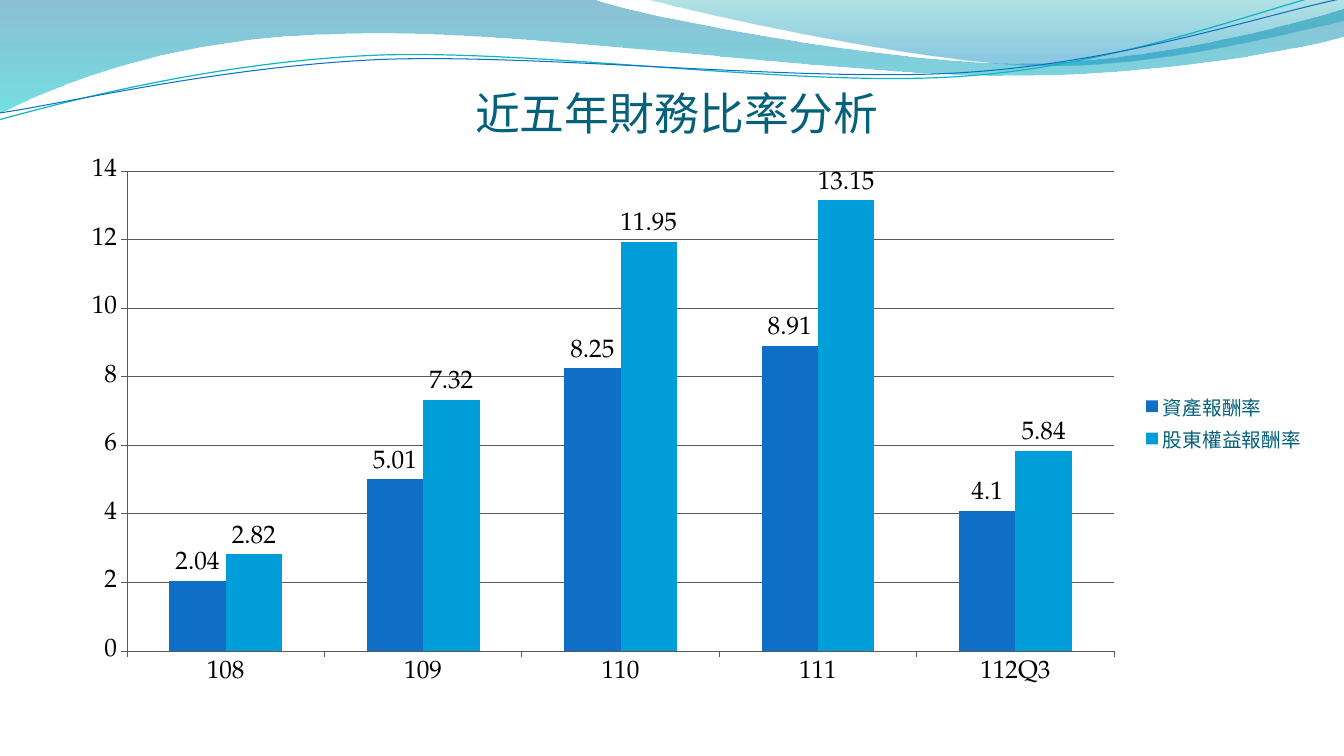
"""Build the slide of five-year financial ratios with its wave banner."""
import math

import pptx
import pptx.chart.data
import pptx.dml.color
import pptx.enum.chart
import pptx.enum.text
import pptx.oxml
import pptx.oxml.ns
import pptx.util
from pptx.util import Inches, Pt

RGBColor = pptx.dml.color.RGBColor
BLUE = RGBColor(0x0F, 0x6F, 0xC6)
SKY = RGBColor(0x00, 0x9D, 0xD9)
TEAL = RGBColor(0x0A, 0xB8, 0xBF)
DEEP_TEAL = RGBColor(0x04, 0x61, 0x7B)
WAVE_BLUE = RGBColor(0x00, 0x74, 0xA1)
WAVE_CYAN = RGBColor(0x00, 0xC6, 0xCF)
CREST_GREEN = RGBColor(0x00, 0xA1, 0xA9)
CREST_BLUE = RGBColor(0x00, 0x8B, 0xBF)
BLACK = RGBColor(0, 0, 0)
GREY = RGBColor(0x59, 0x59, 0x59)
CJK_FONT = "Noto Sans CJK SC"
NUMBER_FONT = "TeX Gyre Pagella"

TITLE = "近五年財務比率分析"
YEARS = ["108", "109", "110", "111", "112Q3"]
RATIOS = [
    ("資產報酬率", (2.04, 5.01, 8.25, 8.91, 4.1), BLUE),
    ("股東權益報酬率", (2.82, 7.32, 11.95, 13.15, 5.84), SKY),
]
CHART_BOX = (0.67, 1.47, 12.39, 5.44)
PLOT_BOX = (1.26, 1.7, 9.79, 4.76)

WAVES = [
    ([(0, 0), (5.87, -0.01), (6.34, 0.17, 8.85, 0.63, 10.11, 0.63),
      (11.38, 0.63, 12.78, 0.26, 13.33, 0.09), (13.35, 0.36),
      (13.11, 0.44, 11.6, 0.76, 9.94, 0.75), (8.29, 0.75, 5.09, 0.28, 3.43, 0.34),
      (1.72, 0.36, 0.61, 0.83, -0.01, 1.13), (0, 0)],
     [(0, WAVE_BLUE, 45), (100, WAVE_CYAN, 55)]),
    ([(6.39, -0.01), (6.79, 0.11, 9.09, 0.62, 10.25, 0.65),
      (11.41, 0.69, 12.82, 0.32, 13.33, 0.21), (13.33, 0), (6.39, -0.01)],
     [(0, CREST_GREEN, 30), (80, CREST_BLUE, 45)]),
]
RIPPLES = [
    ([(-0.01, 1.19), (0.64, 1.01, 2.11, 0.62, 3.69, 0.55),
      (5.27, 0.48, 7.9, 0.87, 9.5, 0.76), (11.1, 0.66, 12.52, 0.08, 13.31, -0.1)],
     TEAL, 0.85),
    ([(0, 1.12), (0.63, 1.03, 2.18, 0.66, 3.78, 0.59),
      (5.37, 0.53, 7.96, 0.82, 9.55, 0.72), (11.15, 0.62, 12.55, 0.14, 13.34, -0.02)],
     BLUE, 0.75),
]
RIPPLE_CENTRE = (6.66, 0.58)
RIPPLE_TILT = -2.7


def level(x, y, tilt):
    """Turn a point back by the tilt around the ripple centre."""
    cx, cy = RIPPLE_CENTRE
    angle = math.radians(-tilt)
    dx, dy = x - cx, y - cy
    return (cx + dx * math.cos(angle) - dy * math.sin(angle),
            cy + dx * math.sin(angle) + dy * math.cos(angle))


def draw_outline(slide, path_steps, close, tilt=0):
    """Draw a shadowless freeform of line ends and cubic curves."""
    points = [level(*step[i:i + 2], tilt)
              for step in path_steps for i in range(0, len(step), 2)]
    start, *rest = [(Inches(x), Inches(y)) for x, y in points]
    builder = slide.shapes.build_freeform(*start)
    builder.add_line_segments(rest, close=close)
    outline = builder.convert_to_shape()
    outline.shadow.inherit = False
    outline.rotation = tilt
    lines = iter(list(outline._element.iter(pptx.oxml.ns.qn("a:lnTo"))))
    for step in path_steps[1:]:
        group = [next(lines) for _ in range(len(step) // 2)]
        if len(group) == 3:
            curve = pptx.oxml.parse_xml(
                f'<a:cubicBezTo {pptx.oxml.ns.nsdecls("a")}/>')
            group[0].addprevious(curve)
            for line in group:
                curve.append(line[0])
                line.getparent().remove(line)
    return outline


def fill_gradient(wave, stops):
    """Fill a wave from top to bottom with translucent colour stops."""
    stop_xml = "".join(
        f'<a:gs pos="{pos * 1000}"><a:srgbClr val="{color}">'
        f'<a:alpha val="{opacity * 1000}"/></a:srgbClr></a:gs>'
        for pos, color, opacity in stops)
    gradient = pptx.oxml.parse_xml(
        f'<a:gradFill {pptx.oxml.ns.nsdecls("a")} rotWithShape="1">'
        f'<a:gsLst>{stop_xml}</a:gsLst><a:lin ang="5400000" scaled="0"/></a:gradFill>')
    wave.fill.background()
    no_fill = wave._element.spPr.find(pptx.oxml.ns.qn("a:noFill"))
    no_fill.getparent().replace(no_fill, gradient)


def format_font(font, size, color, face):
    """Set the size, colour and face of a font."""
    font.size = Pt(size)
    font.color.rgb = color
    font.name = face
    font.bold = False


def set_east_asian(root):
    """Give East Asian glyphs the same face as Latin ones."""
    for latin in list(root.iter(pptx.oxml.ns.qn("a:latin"))):
        latin.addnext(pptx.oxml.parse_xml(
            f'<a:ea {pptx.oxml.ns.nsdecls("a")} typeface="{latin.get("typeface")}"/>'))


def write_text(frame, text, *, size, color, face, align):
    """Write one formatted paragraph into a text frame."""
    frame.text = text
    paragraph = frame.paragraphs[0]
    paragraph.alignment = align
    format_font(paragraph.runs[0].font, size, color, face)


def place_plot(chart):
    """Fix the inner plot area inside the chart."""
    left, top, width, height = CHART_BOX
    x, y, w, h = PLOT_BOX
    shares = {"x": (x - left) / width, "y": (y - top) / height,
              "w": w / width, "h": h / height}
    entries = "".join(f'<c:{key}Mode val="edge"/>' for key in "xy")
    entries += "".join(f'<c:{key} val="{share:.4f}"/>' for key, share in shares.items())
    plot_area = chart._chartSpace.chart.plotArea
    for layout in plot_area.findall(pptx.oxml.ns.qn("c:layout")):
        plot_area.remove(layout)
    plot_area.insert(0, pptx.oxml.parse_xml(
        f'<c:layout {pptx.oxml.ns.nsdecls("c")}><c:manualLayout>'
        f'<c:layoutTarget val="inner"/>{entries}</c:manualLayout></c:layout>'))


def add_ratio_chart(slide):
    """Add the clustered columns of both return ratios."""
    ratio_data = pptx.chart.data.CategoryChartData()
    ratio_data.categories = YEARS
    for name, values, _ in RATIOS:
        ratio_data.add_series(name, values)
    chart = slide.shapes.add_chart(
        pptx.enum.chart.XL_CHART_TYPE.COLUMN_CLUSTERED,
        *map(Inches, CHART_BOX), ratio_data).chart
    format_font(chart.font, 18, BLACK, NUMBER_FONT)
    chart.has_title = False
    chart.has_legend = True
    chart.legend.position = pptx.enum.chart.XL_LEGEND_POSITION.RIGHT
    chart.legend.include_in_layout = False
    format_font(chart.legend.font, 14, DEEP_TEAL, CJK_FONT)

    columns = chart.plots[0]
    columns.gap_width = 150
    columns.overlap = 0
    columns.vary_by_categories = False
    for series, (_, _, color) in zip(columns.series, RATIOS):
        series.format.fill.solid()
        series.format.fill.fore_color.rgb = color
        series.data_labels.show_value = True
        series.data_labels.position = pptx.enum.chart.XL_LABEL_POSITION.OUTSIDE_END

    ratio_axis = chart.value_axis
    ratio_axis.minimum_scale, ratio_axis.maximum_scale = 0, 14
    ratio_axis.major_unit = 2
    ratio_axis.has_major_gridlines = True
    for axis in (chart.category_axis, ratio_axis):
        axis.major_tick_mark = pptx.enum.chart.XL_TICK_MARK.OUTSIDE
    for ruled in (chart.category_axis, ratio_axis, ratio_axis.major_gridlines):
        ruled.format.line.color.rgb = GREY
        ruled.format.line.width = Pt(0.75)
    place_plot(chart)
    set_east_asian(chart._chartSpace)


def main():
    """Assemble and save the slide."""
    deck = pptx.Presentation()
    deck.slide_width, deck.slide_height = Inches(13.33), Inches(7.5)
    slide = deck.slides.add_slide(deck.slide_layouts[5])
    for path_steps, stops in WAVES:
        wave = draw_outline(slide, path_steps, True)
        fill_gradient(wave, stops)
        wave.line.fill.background()
    for path_steps, color, width in RIPPLES:
        ripple = draw_outline(slide, path_steps, False, RIPPLE_TILT)
        ripple.fill.background()
        ripple.line.color.rgb = color
        ripple.line.width = Pt(width)

    heading = slide.shapes.title
    slide.shapes._spTree.append(heading._element)
    heading.left, heading.top, heading.width, heading.height = map(
        Inches, (1.84, 0.77, 9.75, 0.61))
    frame = heading.text_frame
    frame.auto_size = pptx.enum.text.MSO_AUTO_SIZE.NONE
    frame.vertical_anchor = pptx.enum.text.MSO_ANCHOR.BOTTOM
    frame.margin_left = frame.margin_right = frame.margin_bottom = 0
    frame.margin_top = Inches(0.05)
    write_text(frame, TITLE, size=32, color=DEEP_TEAL, face=CJK_FONT,
               align=pptx.enum.text.PP_ALIGN.CENTER)
    set_east_asian(heading._element)
    add_ratio_chart(slide)
    deck.save("out.pptx")


if __name__ == "__main__":
    main()
